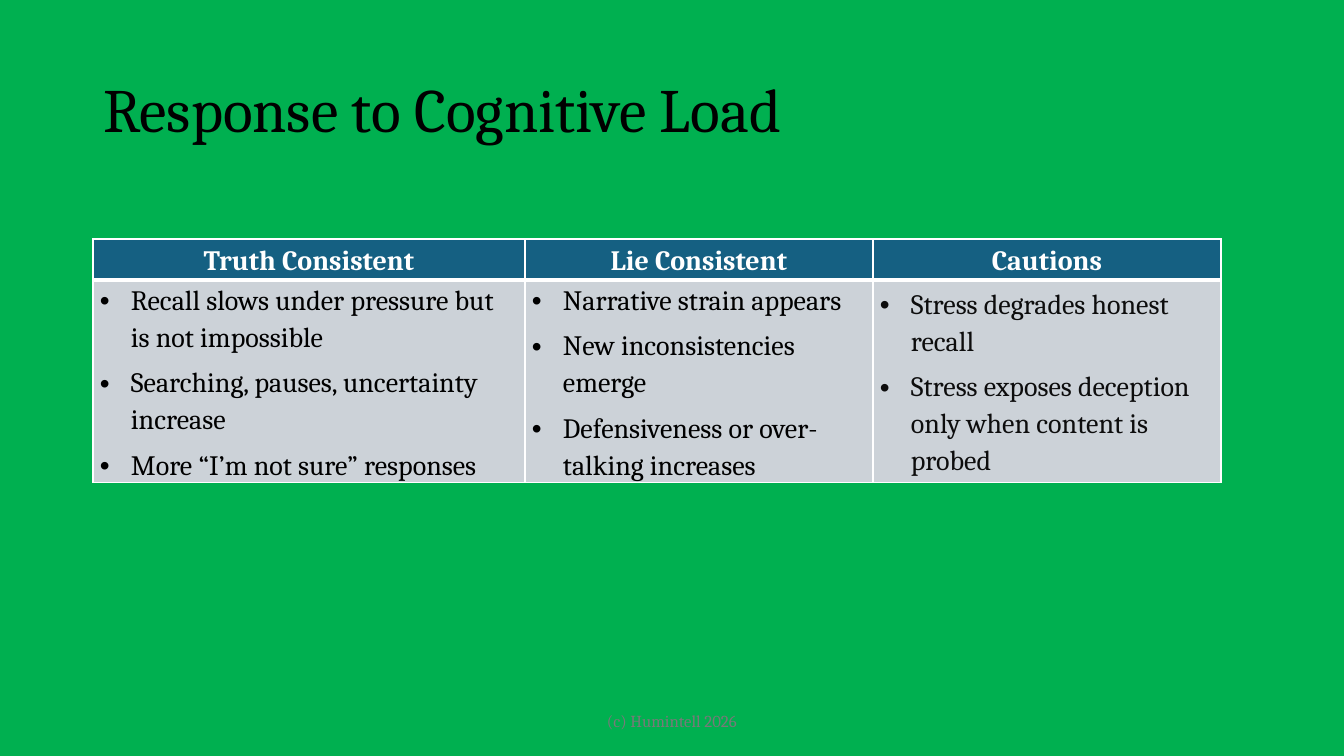
from lxml import etree
from pptx import Presentation, util as u
from pptx.dml.color import RGBColor
from pptx.enum import text
from pptx.oxml import ns

PX = 914400 / 100.8
FONT = "Cambria"
WHITE, BLACK, GREEN = "FFFFFF", "000000", "00B050"
HEADER_BLUE, BODY_GREY = "156082", "CCD2D8"

COLUMNS = [
    ("Truth Consistent", 432, BLACK, [
        "Recall slows under pressure but is not impossible",
        "Searching, pauses, uncertainty increase",
        "More “I’m not sure” responses"]),
    ("Lie Consistent", 348, BLACK, [
        "Narrative strain appears",
        "New inconsistencies emerge",
        "Defensiveness or over-talking increases"]),
    ("Cautions", 348, "0D0D0D", [
        "Stress degrades honest recall",
        "Stress exposes deception only when content is probed"]),
]
ROW_HEIGHTS = (41, 202)


def px(length):
    return u.Emu(round(length * PX))


def color(value):
    return RGBColor.from_string(value)


def apply(target, values):
    for name, value in values.items():
        setattr(target, name, value)


def place(shape, box):
    apply(shape, dict(zip(("left", "top", "width", "height"), map(px, box))))


def style(paragraph, size, ink, bold=False, **spacing):
    apply(paragraph, spacing)
    apply(paragraph.font, {"name": FONT, "size": u.Pt(size), "bold": bold})
    paragraph.font.color.rgb = color(ink)


def add_bullet(paragraph):
    props = paragraph._p.get_or_add_pPr()
    props.set("marL", str(px(31)))
    props.set("indent", str(-px(31)))
    etree.SubElement(props, ns.qn("a:buFont"), typeface="Arial")
    etree.SubElement(props, ns.qn("a:buChar"), char="•")


def add_borders(cell, widths):
    props = cell._tc.get_or_add_tcPr()
    for index, (side, points) in enumerate(zip("LRTB", widths)):
        line = etree.Element(ns.qn(f"a:ln{side}"), w=str(u.Pt(points)))
        fill = etree.SubElement(line, ns.qn("a:solidFill"))
        etree.SubElement(fill, ns.qn("a:srgbClr"), val=WHITE)
        props.insert(index, line)


def fill_cell(cell, lines, fill, ink, borders, header):
    apply(cell, {"margin_left": px(7), "margin_right": px(7),
                 "margin_top": 0, "margin_bottom": 0,
                 "vertical_anchor": text.MSO_ANCHOR.MIDDLE})
    cell.fill.solid()
    cell.fill.fore_color.rgb = color(fill)
    add_borders(cell, borders)
    cell.text_frame.text = "\n".join(lines)
    for paragraph in cell.text_frame.paragraphs:
        apply(paragraph, {"line_spacing": 1.15, "space_after": u.Pt(6)})
        if header:
            paragraph.alignment = text.PP_ALIGN.CENTER
        else:
            add_bullet(paragraph)
        style(paragraph, 20, ink, bold=header)


# Title
def add_title(slide, box):
    title = slide.shapes.title
    place(title, box)
    frame = title.text_frame
    frame.text = "Response to Cognitive Load"
    apply(frame, {"vertical_anchor": text.MSO_ANCHOR.MIDDLE,
                  "auto_size": text.MSO_AUTO_SIZE.NONE, "word_wrap": True})
    style(frame.paragraphs[0], 44, BLACK,
          alignment=text.PP_ALIGN.LEFT, line_spacing=0.9)


# Comparison table
def add_comparison(slide, left, top):
    width = sum(column[1] for column in COLUMNS)
    box = map(px, (left, top, width, sum(ROW_HEIGHTS)))
    table = slide.shapes.add_table(2, len(COLUMNS), *box).table
    for row, height in zip(table.rows, ROW_HEIGHTS):
        row.height = px(height)
    for index, (heading, column_width, ink, points) in enumerate(COLUMNS):
        table.columns[index].width = px(column_width)
        fill_cell(table.cell(0, index), [heading], HEADER_BLUE, WHITE,
                  (1, 1, 1, 3), header=True)
        fill_cell(table.cell(1, index), points, BODY_GREY, ink,
                  (1, 1, 3, 1), header=False)


# Copyright line
def add_copyright(slide, box):
    frame = slide.shapes.add_textbox(*map(px, box)).text_frame
    frame.text = "(c) Humintell 2026"
    apply(frame, {"vertical_anchor": text.MSO_ANCHOR.MIDDLE, "word_wrap": True})
    style(frame.paragraphs[0], 12, "797979", alignment=text.PP_ALIGN.CENTER)


def main():
    deck = Presentation()
    apply(deck, {"slide_width": px(1344), "slide_height": px(756)})
    slide = deck.slides.add_slide(deck.slide_layouts[5])
    slide.background.fill.solid()
    slide.background.fill.fore_color.rgb = color(GREEN)
    add_title(slide, (93, 40, 1159, 146))
    add_comparison(slide, 93, 239)
    add_copyright(slide, (445, 701, 454, 40))
    deck.save("out.pptx")


if __name__ == "__main__":
    main()
